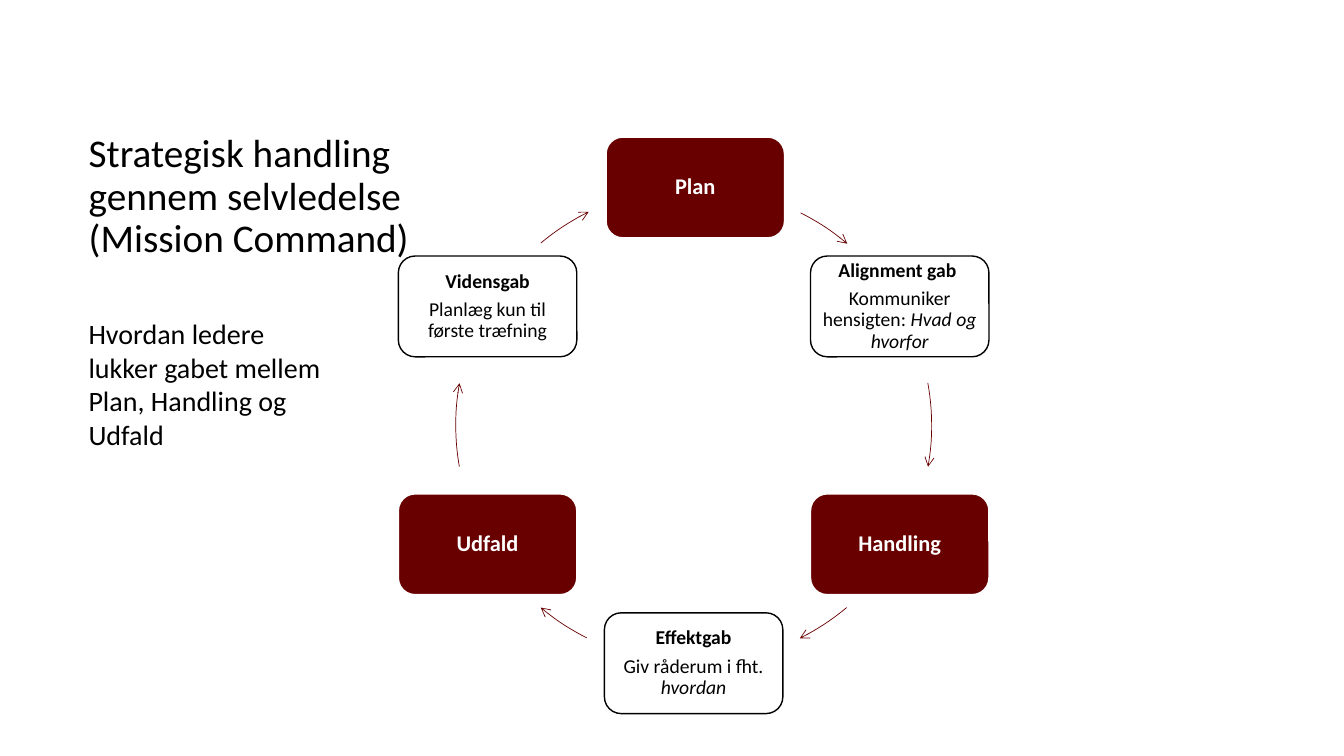
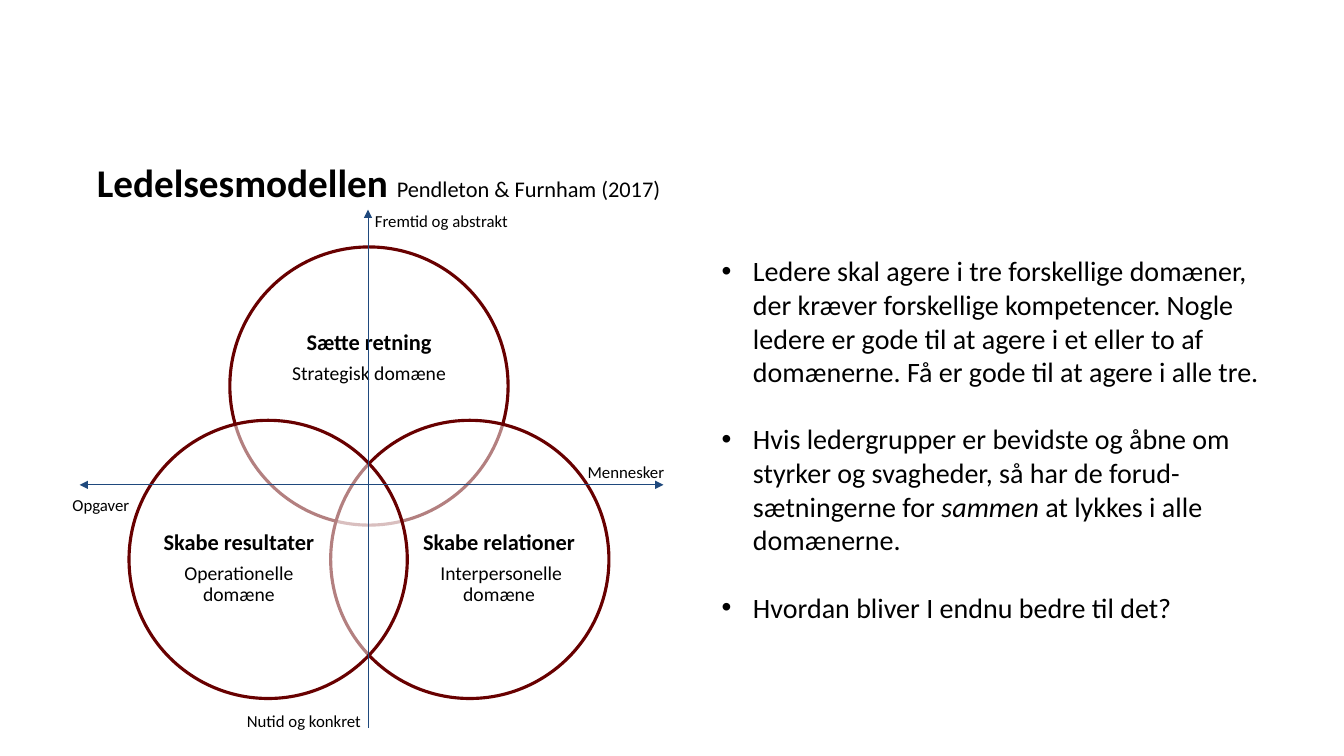
from dataclasses import dataclass
from math import cos, radians, sin

from lxml.etree import SubElement
from pptx import Presentation
from pptx.dml.color import RGBColor
from pptx.enum.shapes import MSO_CONNECTOR, MSO_SHAPE
from pptx.enum.text import MSO_ANCHOR, MSO_AUTO_SIZE, PP_ALIGN
from pptx.oxml.ns import qn
from pptx.util import Pt

PX = 9144  # 100 px to the inch


@dataclass(frozen=True)
class Theme:
    font: str = "Calibri"
    black: RGBColor = RGBColor(0, 0, 0)
    white: RGBColor = RGBColor(255, 255, 255)
    wine: RGBColor = RGBColor(0x68, 0, 0)
    blue: RGBColor = RGBColor(0x1F, 0x49, 0x7D)
    title: int = 28
    body: int = 20
    heading: int = 16
    detail: int = 14
    label: int = 12


T = Theme()


def write(sp, paragraphs, size, color=T.black, align=PP_ALIGN.LEFT, spacing=1.0, gap=0,
          anchor=MSO_ANCHOR.TOP, margin=None, wrap=True, fit=MSO_AUTO_SIZE.NONE, bullet=None):
    """Fill a shape with paragraphs, each a list of (text, run format) pairs."""
    tf = sp.text_frame
    tf.word_wrap, tf.auto_size, tf.vertical_anchor = wrap, fit, anchor
    if margin is not None:
        tf.margin_left = tf.margin_top = tf.margin_right = tf.margin_bottom = margin * PX
    for i, runs in enumerate(paragraphs):
        p = tf.add_paragraph() if i else tf.paragraphs[0]
        p.alignment, p.line_spacing = align, spacing
        if i:
            p.space_before = Pt(gap)
        if bullet:
            pPr = p._p.get_or_add_pPr()
            pPr.set("marL", str(31 * PX))
            pPr.set("indent", str(-31 * PX))
            SubElement(pPr, qn("a:buFont")).set("typeface", "Arial")
            SubElement(pPr, qn("a:buChar")).set("char", bullet)
        for text, fmt in runs:
            r = p.add_run()
            r.text = text
            r.font.name, r.font.color.rgb = T.font, color
            r.font.size = Pt(fmt.get("size", size))
            r.font.bold = fmt.get("bold", False)
            r.font.italic = fmt.get("italic", False)


def outline(sp, color, width, **ends):
    """Set a line without shadow; ends maps headEnd or tailEnd to an arrow type."""
    sp.line.color.rgb, sp.line.width = color, Pt(width)
    spPr = sp._element.spPr
    for end, kind in ends.items():
        SubElement(spPr.get_or_add_ln(), qn(f"a:{end}")).set("type", kind)
    SubElement(spPr, qn("a:effectLst"))


BOLD, ITALIC, PLAIN = {"bold": True}, {"italic": True}, {}
DETAIL = {"size": T.detail}

prs = Presentation()
prs.slide_width, prs.slide_height = 1333 * PX, 750 * PX

# Titles
titles = [
    ((78, 199, 360, 65),
     [("Strategisk handling gennem selvledelse (Mission Command)", PLAIN)]),
    ((86, 122, 1150, 87),
     [("Ledelsesmodellen ", BOLD), ("Pendleton & Furnham (2017)", {"size": T.heading})]),
]
slides = []
for rect, runs in titles:
    slide = prs.slides.add_slide(prs.slide_layouts[5])
    sp = slide.shapes.title
    sp.left, sp.top, sp.width, sp.height = (v * PX for v in rect)
    write(sp, [runs], T.title, spacing=0.9, anchor=MSO_ANCHOR.BOTTOM)
    slides.append(slide)
cycle, model = (slide.shapes for slide in slides)

# Slide 1: steps and gaps by clockwise angle, each followed by an arrow along the ring
RING_X, RING_Y, RING_R = 688, 422, 236
STEP_W, STEP_H = 177, 100
steps = [
    (0.4, (26.7, 40.2), [[("Plan", BOLD)]]),
    (60, (79.7, 100), [[("Alignment gab ", BOLD)],
                       [("Kommuniker hensigten: ", PLAIN), ("Hvad og hvorfor", ITALIC)]]),
    (120, (140, 153.5), [[("Handling", BOLD)]]),
    (180, (206.7, 220), [[("Effektgab", BOLD)],
                         [("Giv råderum i fht. ", PLAIN), ("hvordan", ITALIC)]]),
    (240, (260, 280.2), [[("Udfald", BOLD)]]),
    (300, (320, 333.8), [[("Vidensgab", BOLD)],
                         [("Planlæg kun til første træfning", PLAIN)]]),
]
for i, (angle, sweep, paragraphs) in enumerate(steps):
    is_gap = i % 2 == 1
    left = RING_X + RING_R * sin(radians(angle)) - STEP_W / 2
    top = RING_Y - RING_R * cos(radians(angle)) - STEP_H / 2
    sp = cycle.add_shape(MSO_SHAPE.ROUNDED_RECTANGLE, round(left * PX), round(top * PX),
                         STEP_W * PX, STEP_H * PX)
    sp.fill.solid()
    sp.fill.fore_color.rgb = T.white if is_gap else T.wine
    outline(sp, T.black if is_gap else T.white, 1)
    write(sp, paragraphs, T.detail if is_gap else T.heading,
          color=T.black if is_gap else T.white, align=PP_ALIGN.CENTER, spacing=0.9, gap=5,
          anchor=MSO_ANCHOR.MIDDLE, margin=6 if is_gap else 7)

    arc = cycle.add_shape(MSO_SHAPE.ARC, (RING_X - RING_R) * PX, (RING_Y - RING_R) * PX,
                          2 * RING_R * PX, 2 * RING_R * PX)
    for k, end in enumerate(sweep):
        arc.adjustments[k] = (end - 90) % 360 * 0.6  # 60000 units a degree, from the east
    arc.fill.background()
    outline(arc, T.wine, 0.5, tailEnd="arrow")

sp = cycle.add_textbox(*(v * PX for v in (78, 309, 260, 145)))
write(sp, [[("Hvordan ledere lukker gabet mellem Plan, Handling og Udfald", PLAIN)]],
      T.body, fit=MSO_AUTO_SIZE.SHAPE_TO_FIT_TEXT)

# Slide 2: three overlapping domains
CIRCLE = 276
domains = [
    ((228, 245), (265, 293, 202, 124), "Sætte retning", "Strategisk domæne"),
    ((328, 417), (412, 488, 166, 152), "Skabe relationer", " Interpersonelle domæne"),
    ((128, 417), (154, 488, 166, 152), "Skabe resultater", "Operationelle domæne"),
]
for (left, top), rect, heading, detail in domains:
    sp = model.add_shape(MSO_SHAPE.OVAL, left * PX, top * PX, CIRCLE * PX, CIRCLE * PX)
    sp.fill.solid()
    sp.fill.fore_color.rgb = T.white
    white = sp._element.spPr.find(qn("a:solidFill"))[0]
    SubElement(white, qn("a:alpha")).set("val", "50000")
    outline(sp, T.wine, 2.25)
    sp = model.add_textbox(*(v * PX for v in rect))
    write(sp, [[(heading, BOLD)], [(detail, DETAIL)]], T.heading, align=PP_ALIGN.CENTER,
          spacing=0.9, gap=5.6, anchor=MSO_ANCHOR.MIDDLE, margin=0)

# Axes and their labels
axes = [
    ((79, 481, 658, 481), {"headEnd": "triangle", "tailEnd": "triangle"}),
    ((365, 722, 365, 208), {"tailEnd": "triangle"}),
]
for ends, arrows in axes:
    axis = model.add_connector(MSO_CONNECTOR.STRAIGHT, *(v * PX for v in ends))
    outline(axis, T.blue, 0.5, **arrows)

labels = [
    ((573, 453, 98, 30), "Mennesker"),
    ((62, 486, 80, 30), "Opgaver"),
    ((362, 204, 157, 30), "Fremtid og abstrakt"),
    ((235, 700, 138, 30), "Nutid og konkret"),
]
for rect, text in labels:
    sp = model.add_textbox(*(v * PX for v in rect))
    write(sp, [[(text, PLAIN)]], T.label, wrap=False, fit=MSO_AUTO_SIZE.SHAPE_TO_FIT_TEXT)

points = [
    [("Ledere skal agere i tre forskellige domæner, der kræver forskellige kompetencer. "
      "Nogle ledere er gode til at agere i et eller to af domænerne. "
      "Få er gode til at agere i alle tre.", PLAIN)],
    [("Hvis ledergrupper er bevidste og åbne om styrker og svagheder, "
      "så har de forud-sætningerne for ", PLAIN),
     ("sammen", ITALIC), (" at lykkes i alle domænerne.", PLAIN)],
    [("Hvordan bliver I endnu bedre til det?", PLAIN)],
]
sp = model.add_textbox(*(v * PX for v in (706, 247, 569, 414)))
write(sp, points, T.body, gap=24, bullet="•", fit=MSO_AUTO_SIZE.SHAPE_TO_FIT_TEXT)

prs.save("out.pptx")
